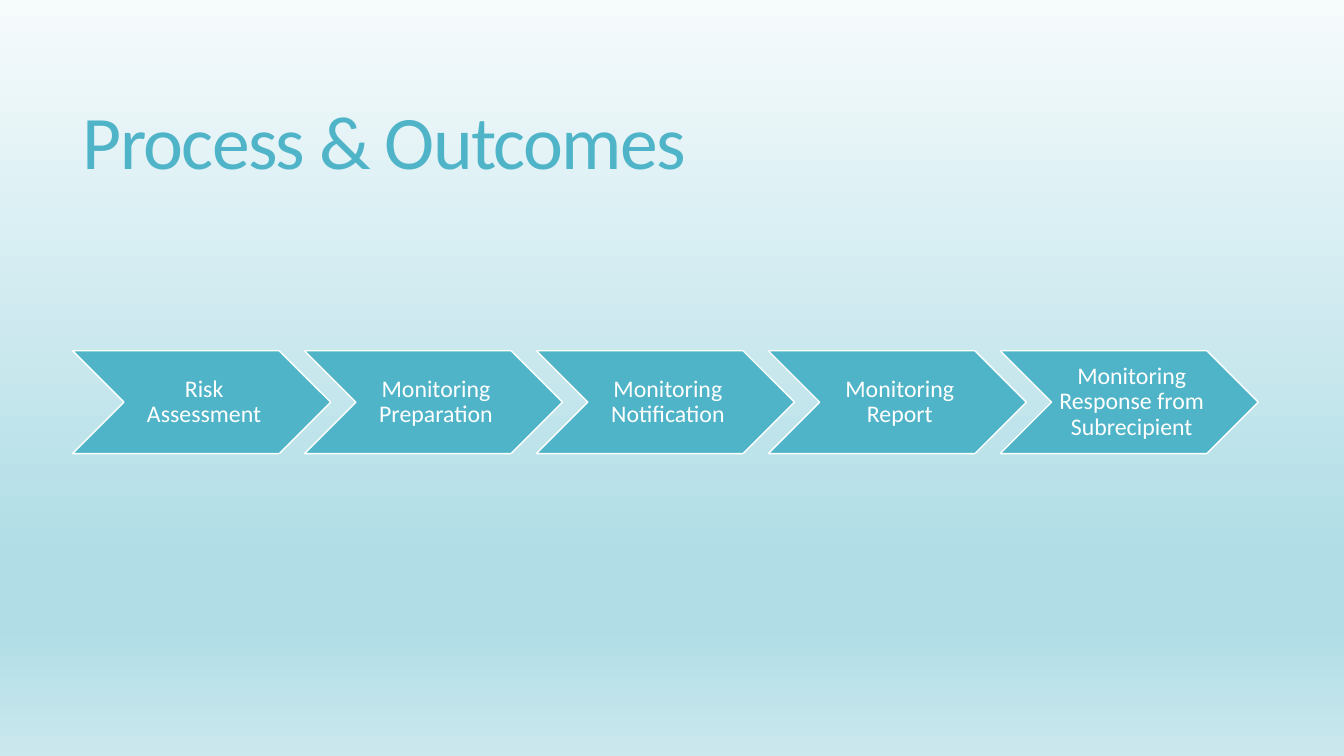
from lxml import etree
from pptx import Presentation
from pptx.dml.color import RGBColor
from pptx.enum.shapes import MSO_SHAPE
from pptx.enum.text import MSO_ANCHOR, MSO_AUTO_SIZE, PP_ALIGN
from pptx.oxml.ns import qn
from pptx.util import Pt

EMU_PER_PX = 9144  # 100 px to the inch
COLORS = {"teal": "50B4C8", "white": "FFFFFF",
          "sky": "F6FBFC", "aqua": "B0DDE6", "mist": "CBE8EE"}
BACKGROUND = [(0, "sky"), (74, "aqua"), (83, "aqua"), (100, "mist")]
STEPS = ["Risk Assessment", "Monitoring Preparation", "Monitoring Notification",
         "Monitoring Report", "Monitoring Response from Subrecipient"]
LEFT, TOP, WIDTH, HEIGHT, PITCH = 72, 348, 256, 102, 230


def px(n):
    return round(n * EMU_PER_PX)


def rgb(name):
    return RGBColor.from_string(COLORS[name])


def set_all(obj, values):
    for name, value in values.items():
        setattr(obj, name, value)


class SlideBuilder:
    def __init__(self, prs, font="Calibri"):
        self.font = font
        self.s = prs.slides.add_slide(prs.slide_layouts[5])

    def background(self, stops):
        fill = self.s.background.fill
        fill.gradient()
        fill.gradient_angle = 270  # counter-clockwise, so top to bottom
        gs_lst = self.s.element.find(".//" + qn("a:gsLst"))
        for gs in list(gs_lst):
            gs_lst.remove(gs)
        for percent, color in stops:
            gs = etree.SubElement(gs_lst, qn("a:gs"), pos=str(percent * 1000))
            etree.SubElement(gs, qn("a:srgbClr"), val=COLORS[color])

    def add_text(self, sp, text, size, color, align, spacing, insets):
        tf = sp.text_frame
        margins = ("margin_left", "margin_top", "margin_right", "margin_bottom")
        set_all(tf, {"word_wrap": True, "auto_size": MSO_AUTO_SIZE.NONE,
                     "vertical_anchor": MSO_ANCHOR.MIDDLE,
                     **dict(zip(margins, map(px, insets)))})
        p = tf.paragraphs[0]
        set_all(p, {"alignment": align, "line_spacing": spacing})
        r = p.add_run()
        r.text = text
        set_all(r.font, {"name": self.font, "size": Pt(size)})
        r.font.color.rgb = rgb(color)
        return r

    def title(self, text, x, y, w, h):
        sp = self.s.shapes.title
        set_all(sp, {"left": px(x), "top": px(y), "width": px(w), "height": px(h)})
        r = self.add_text(sp, text, 54, "teal", PP_ALIGN.LEFT, 0.85, (10, 5, 10, 5))
        r.font._element.set("spc", "-120")

    def chevron(self, text, x, y, w, h):
        sp = self.s.shapes.add_shape(MSO_SHAPE.CHEVRON, px(x), px(y), px(w), px(h))
        sp.shadow.inherit = False
        sp.fill.solid()
        sp.fill.fore_color.rgb = rgb("teal")
        sp.line.color.rgb = rgb("white")
        sp.line.width = Pt(1)
        self.add_text(sp, text, 17, "white", PP_ALIGN.CENTER, 0.9, (7, 2, 2, 2))


def main():
    prs = Presentation()
    set_all(prs, {"slide_width": px(1333), "slide_height": px(750)})
    slide = SlideBuilder(prs)
    slide.background(BACKGROUND)
    slide.title("Process & Outcomes", 72, 55, 1178, 181)
    for i, step in enumerate(STEPS):
        slide.chevron(step, LEFT + i * PITCH, TOP, WIDTH, HEIGHT)
    prs.save("out.pptx")


if __name__ == "__main__":
    main()
